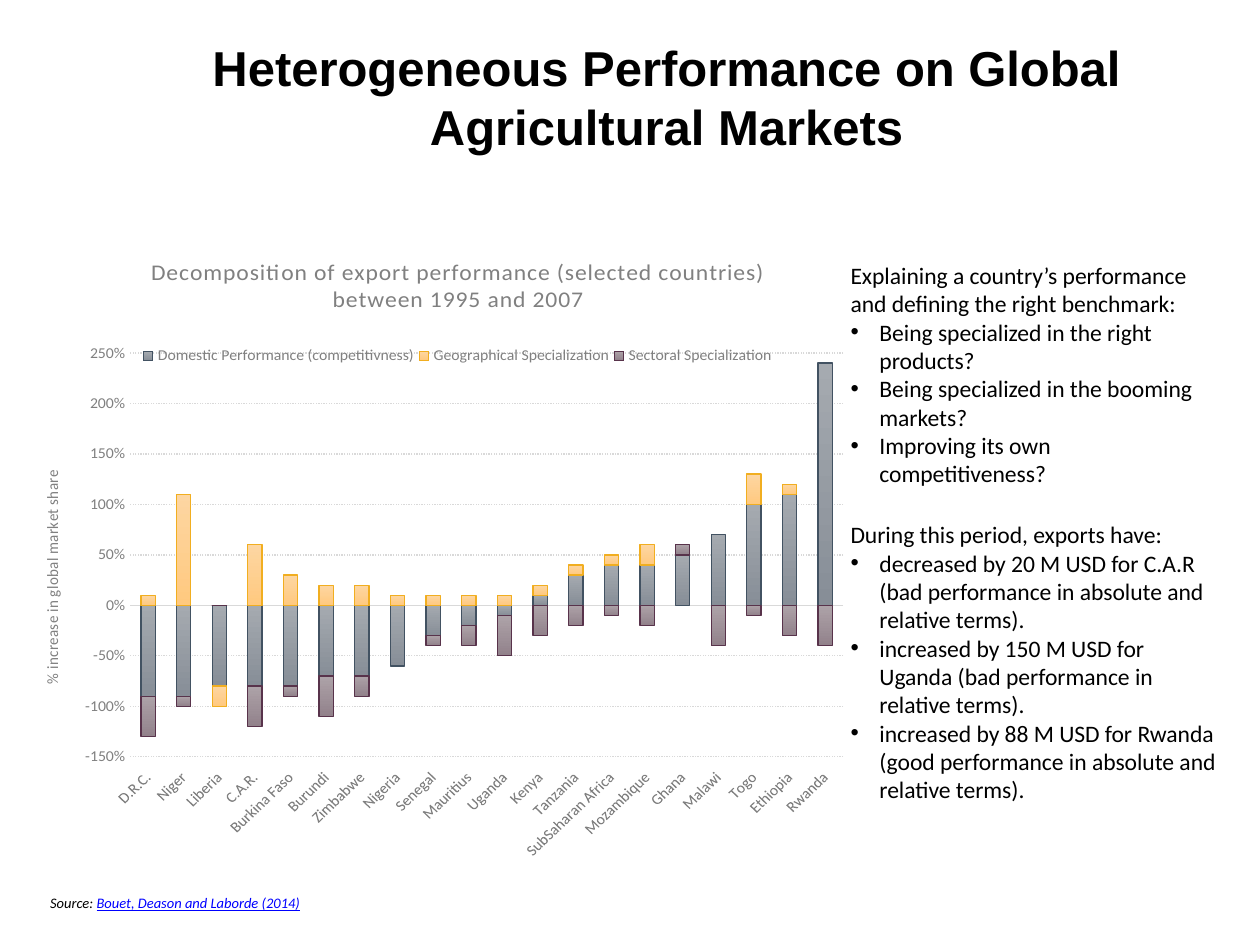
"""Builds a slide on how African countries perform on farm export markets."""
import dataclasses

import lxml.etree
import pptx
import pptx.chart.data
import pptx.dml.color
import pptx.enum.chart
import pptx.enum.dml
import pptx.enum.text
import pptx.oxml.ns
import pptx.util

Inches = pptx.util.Inches
qn = pptx.oxml.ns.qn


@dataclasses.dataclass(frozen=True)
class Theme:
    head: str = "Arial"
    body: str = "Calibri"
    ink: str = "000000"
    gray: str = "808080"
    rule: str = "D9D9D9"
    link: str = "0000FF"
    title: float = 28
    text: float = 13.5
    axis: float = 9
    note: float = 8.3
    line: float = 0.75


THEME = Theme()

NAMES = ["D.R.C.", "Niger", "Liberia", "C.A.R.", "Burkina Faso", "Burundi",
         "Zimbabwe", "Nigeria", "Senegal", "Mauritius", "Uganda", "Kenya",
         "Tanzania", "SubSaharan Africa", "Mozambique", "Ghana", "Malawi",
         "Togo", "Ethiopia", "Rwanda"]

SERIES = [
    ("Domestic Performance (competitivness)", ("A5AAB0", "878E97", "425262"),
     [-0.9, -0.9, -0.8, -0.8, -0.8, -0.7, -0.7, -0.6, -0.3, -0.2,
      -0.1, 0.1, 0.3, 0.4, 0.4, 0.5, 0.7, 1, 1.1, 2.4]),
    ("Geographical Specialization", ("FDD6A2", "FFC97F", "F1AE20"),
     [0.1, 1.1, -0.2, 0.6, 0.3, 0.2, 0.2, 0.1, 0.1, 0.1,
      0.1, 0.1, 0.1, 0.1, 0.2, 0, 0, 0.3, 0.1, 0]),
    ("Sectoral Specialization", ("ADA2A8", "92828B", "58334B"),
     [-0.4, -0.1, 0, -0.4, -0.1, -0.4, -0.2, 0, -0.1, -0.2,
      -0.4, -0.3, -0.2, -0.1, -0.2, 0.1, -0.4, -0.1, -0.3, -0.4]),
]

CAUSES = ["Explaining a country’s performance and defining the right benchmark:",
          "Being specialized in the right products?",
          "Being specialized in the booming markets?",
          "Improving its own competitiveness?"]

TRENDS = ["During this period, exports have:",
          "decreased by 20 M USD for C.A.R (bad performance in absolute and relative terms).",
          "increased by 150 M USD for Uganda (bad performance in relative terms).",
          "increased by 88 M USD for Rwanda (good performance in absolute and relative terms)."]


def rgb(code):
    """Turn a hex code into a colour."""
    return pptx.dml.color.RGBColor.from_string(code)


def style(font, size, color=THEME.ink, name=THEME.body, bold=False):
    """Set the face, size and colour of a font."""
    font.name, font.size, font.bold = name, pptx.util.Pt(size), bold
    font.color.rgb = rgb(color)


def move(shape, *box):
    """Place a shape by left, top, width and height in inches."""
    shape.left, shape.top, shape.width, shape.height = map(Inches, box)


def add_title(shape, text):
    """Fill the title placeholder."""
    move(shape, 0.98, 0.22, 8.62, 1.09)
    frame = shape.text_frame
    frame.text = text
    frame.auto_size = pptx.enum.text.MSO_AUTO_SIZE.NONE
    frame.vertical_anchor = pptx.enum.text.MSO_ANCHOR.MIDDLE
    frame.margin_top = frame.margin_bottom = Inches(0.02)
    para = frame.paragraphs[0]
    para.alignment = pptx.enum.text.PP_ALIGN.CENTER
    style(para.runs[0].font, THEME.title, name=THEME.head, bold=True)


def add_list(shape, top, height, lines):
    """Fill a body placeholder with a lead line and bullets."""
    move(shape, 6.65, top, 3.15, height)
    frame = shape.text_frame
    frame.text = "\n".join(lines)
    frame.auto_size = pptx.enum.text.MSO_AUTO_SIZE.NONE
    for rank, para in enumerate(frame.paragraphs):
        para.space_before = pptx.util.Pt(0)
        style(para.runs[0].font, THEME.text)
        props = para._p.get_or_add_pPr()
        indent = Inches(0.23) if rank else 0
        props.set("marL", str(indent))
        props.set("indent", str(-indent))
        if rank:
            lxml.etree.SubElement(props, qn("a:buFont")).set("typeface", THEME.head)
            lxml.etree.SubElement(props, qn("a:buChar")).set("char", "•")
        else:
            lxml.etree.SubElement(props, qn("a:buNone"))


def add_note(slide, lead, cite):
    """Add the source line."""
    box = slide.shapes.add_textbox(*map(Inches, (0.3, 7.05, 2.33, 0.24)))
    box.text_frame.word_wrap = True
    para = box.text_frame.paragraphs[0]
    for text, color in ((lead, THEME.ink), (cite, THEME.link)):
        run = para.add_run()
        run.text = text
        style(run.font, THEME.note, color)
        run.font.italic = True
    run.font.underline = True


def lay_out(node, inner=False, **spots):
    """Give a chart part a manual layout in shares of the chart."""
    for old in node.findall(qn("c:layout")):
        node.remove(old)
    layout = node.makeelement(qn("c:layout"), {})
    manual = lxml.etree.SubElement(layout, qn("c:manualLayout"))
    if inner:
        lxml.etree.SubElement(manual, qn("c:layoutTarget")).set("val", "inner")
    for key in ("x", "y"):
        lxml.etree.SubElement(manual, qn(f"c:{key}Mode")).set("val", "edge")
    for key, share in spots.items():
        lxml.etree.SubElement(manual, qn(f"c:{key}")).set("val", str(share))
    over = node.find(qn("c:overlay"))
    if over is None:
        node.insert(0, layout)
    else:
        over.addprevious(layout)


def caption(title, text, size, gap, x, y):
    """Write and place a chart or axis title."""
    title.text_frame.text = text
    font = title.text_frame.paragraphs[0].runs[0].font
    style(font, size, THEME.gray)
    font._element.set("spc", str(gap))
    lay_out(title._element, x=x, y=y)


def set_line(line, color):
    """Draw a thin line in one colour."""
    line.color.rgb = rgb(color)
    line.width = pptx.util.Pt(THEME.line)


def set_axes(chart):
    """Format both axes and the grid."""
    enum = pptx.enum.chart
    cats, vals = chart.category_axis, chart.value_axis
    for axis in (cats, vals):
        axis.major_tick_mark = axis.minor_tick_mark = enum.XL_TICK_MARK.NONE
        style(axis.tick_labels.font, THEME.axis, THEME.gray)
    cats.tick_label_position = enum.XL_TICK_LABEL_POSITION.LOW
    cats._element.txPr.bodyPr.set("rot", "-2700000")
    set_line(cats.format.line, THEME.rule)
    vals.minimum_scale, vals.maximum_scale, vals.major_unit = -1.5, 2.5, 0.5
    vals.tick_labels.number_format = "0%"
    vals.tick_labels.number_format_is_linked = False
    vals.format.line.fill.background()
    grid = vals.major_gridlines.format.line
    set_line(grid, THEME.rule)
    grid.dash_style = pptx.enum.dml.MSO_LINE.ROUND_DOT
    caption(vals.axis_title, "% increase in global market share", THEME.axis, 0, 0, 0.41)


def add_chart(slide):
    """Add the stacked column chart."""
    data = pptx.chart.data.CategoryChartData(number_format="0%")
    data.categories = NAMES
    for name, _, nums in SERIES:
        data.add_series(name, nums)
    kind = pptx.enum.chart.XL_CHART_TYPE.COLUMN_STACKED
    box = map(Inches, (0.31, 1.86, 6.58, 4.96))
    chart = slide.shapes.add_chart(kind, *box, data).chart
    style(chart.font, 10)
    chart.has_title = chart.has_legend = True
    caption(chart.chart_title, "Decomposition of export performance (selected countries) "
            "between 1995 and 2007", THEME.text, 50, 0.13, 0.03)
    legend = chart.legend
    legend.position = pptx.enum.chart.XL_LEGEND_POSITION.BOTTOM
    legend.include_in_layout = False
    style(legend.font, THEME.axis, THEME.gray)
    lay_out(legend._element, x=0.12, y=0.18, w=0.77, h=0.05)
    lay_out(chart._chartSpace.chart.plotArea, inner=True, x=0.11, y=0.2, w=0.86, h=0.68)
    set_axes(chart)
    plot = chart.plots[0]
    plot.gap_width, plot.overlap, plot.vary_by_categories = 150, 100, False
    for bars, (_, (light, dark, edge), _) in zip(plot.series, SERIES):
        bars.invert_if_negative = False
        fill = bars.format.fill
        fill.gradient()
        fill.gradient_angle = 270
        for stop, color in zip(fill.gradient_stops, (light, dark)):
            stop.color.rgb = rgb(color)
        set_line(bars.format.line, edge)


def main():
    """Build and save the slide."""
    deck = pptx.Presentation()
    deck.slide_width, deck.slide_height = Inches(10), Inches(7.5)
    slide = deck.slides.add_slide(deck.slide_layouts[3])
    title, causes, trends = slide.placeholders
    add_title(title, "Heterogeneous Performance on Global Agricultural Markets")
    add_chart(slide)
    add_note(slide, "Source: ", "Bouet, Deason and Laborde (2014)")
    add_list(causes, 2.02, 1.92, CAUSES)
    add_list(trends, 4.08, 2.6, TRENDS)
    deck.save("out.pptx")


if __name__ == "__main__":
    main()
